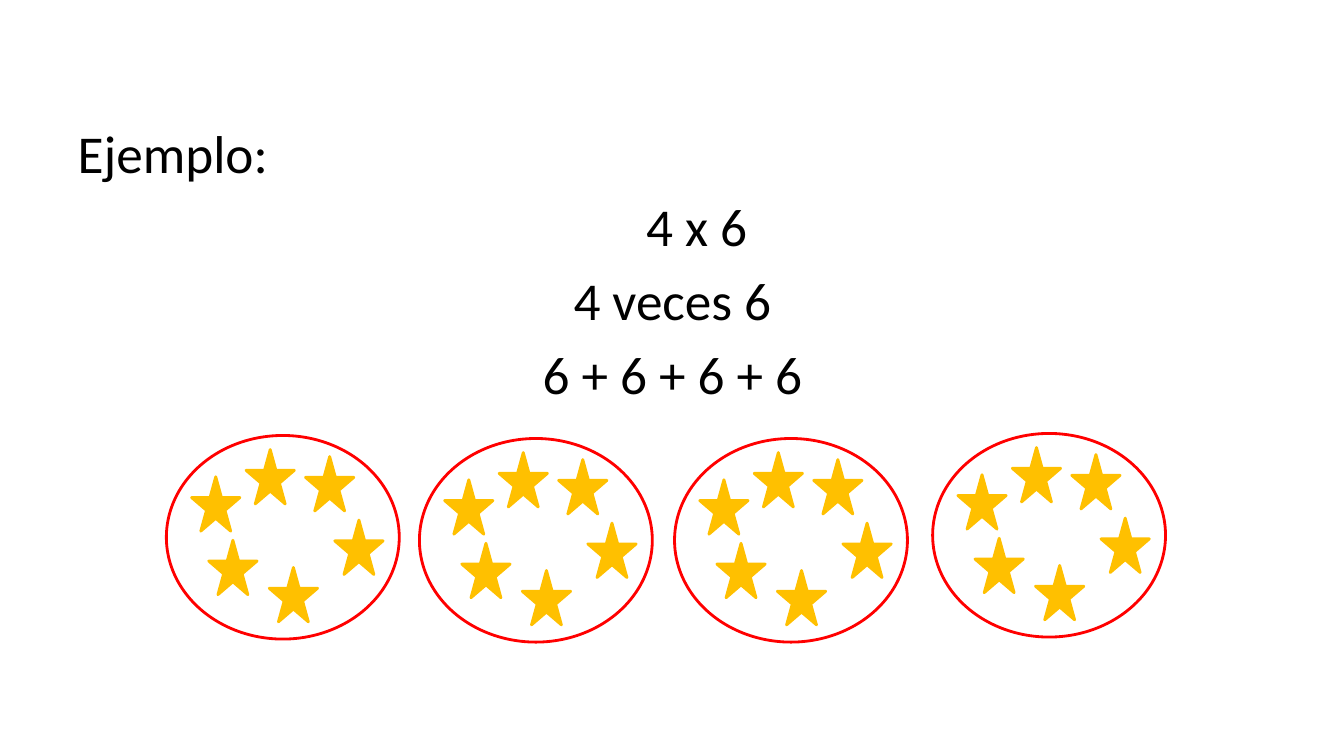
import pptx
import pptx.dml.color
import pptx.enum.shapes
import pptx.enum.text
import pptx.oxml.ns
import pptx.util
from lxml import etree

Inches = pptx.util.Inches
Pt = pptx.util.Pt
SHAPE = pptx.enum.shapes.MSO_SHAPE
ALIGN = pptx.enum.text.PP_ALIGN

RED, GOLD, WHITE, BLACK = "FF0000", "FFC000", "FFFFFF", "000000"

# Text, alignment and left indent in inches
EXAMPLE_LINES = [
    ("Ejemplo:", ALIGN.LEFT, 0),
    ("4 x 6", ALIGN.CENTER, 0.48),
    ("4 veces 6", ALIGN.CENTER, 0),
    ("6 + 6 + 6 + 6", ALIGN.CENTER, 0),
]

SET_SIZE = (2.31, 2.02)
SET_CORNERS = [(1.65, 4.32), (4.16, 4.35), (6.69, 4.35), (9.25, 4.3)]
STAR_SIZE = (0.48, 0.54)
# Star corners, measured from the corner of their set
STAR_OFFSETS = [(0.79, 0.14), (1.67, 0.84), (1.02, 1.31),
                (0.42, 1.04), (1.38, 0.21), (0.25, 0.41)]


def colour(hex_value):
    return pptx.dml.color.RGBColor.from_string(hex_value)


def remove_bullet(paragraph, left_indent):
    properties = paragraph._p.get_or_add_pPr()
    properties.set("marL", str(Inches(left_indent)))
    properties.set("indent", "0")
    etree.SubElement(properties, pptx.oxml.ns.qn("a:buNone"))


def write_example(body, left, top, width, height):
    body.left, body.top = Inches(left), Inches(top)
    body.width, body.height = Inches(width), Inches(height)
    frame = body.text_frame
    frame.auto_size = pptx.enum.text.MSO_AUTO_SIZE.NONE
    frame.vertical_anchor = pptx.enum.text.MSO_ANCHOR.TOP
    for index, (text, alignment, left_indent) in enumerate(EXAMPLE_LINES):
        paragraph = frame.add_paragraph() if index else frame.paragraphs[0]
        paragraph.text = text
        paragraph.alignment = alignment
        paragraph.space_before = Pt(7 if index else 0)
        remove_bullet(paragraph, left_indent)
        paragraph.font.name = "Calibri"
        paragraph.font.size = Pt(38)
        paragraph.font.color.rgb = colour(BLACK)


def draw_shape(shapes, preset, corner, size, fill, line):
    shape = shapes.add_shape(preset, *map(Inches, corner + size))
    shape.shadow.inherit = False
    shape.fill.solid()
    shape.fill.fore_color.rgb = colour(fill)
    shape.line.color.rgb = colour(line)
    shape.line.width = Pt(2)


def draw_star_set(slide, left, top):
    """Group an oval with the six stars inside it."""
    shapes = slide.shapes.add_group_shape().shapes
    draw_shape(shapes, SHAPE.OVAL, (left, top), SET_SIZE, WHITE, RED)
    for across, down in STAR_OFFSETS:
        draw_shape(shapes, SHAPE.STAR_5_POINT, (left + across, top + down),
                   STAR_SIZE, GOLD, GOLD)


def build_multiplication_slide(presentation):
    slide = presentation.slides.add_slide(presentation.slide_layouts[1])
    title = slide.shapes.title._element
    title.getparent().remove(title)
    write_example(slide.placeholders[1], 0.67, 1.14, 12, 5.56)
    for left, top in SET_CORNERS:
        draw_star_set(slide, left, top)


def main():
    presentation = pptx.Presentation()
    presentation.slide_width = Inches(13.33)
    presentation.slide_height = Inches(7.5)
    build_multiplication_slide(presentation)
    presentation.save("out.pptx")


if __name__ == "__main__":
    main()
